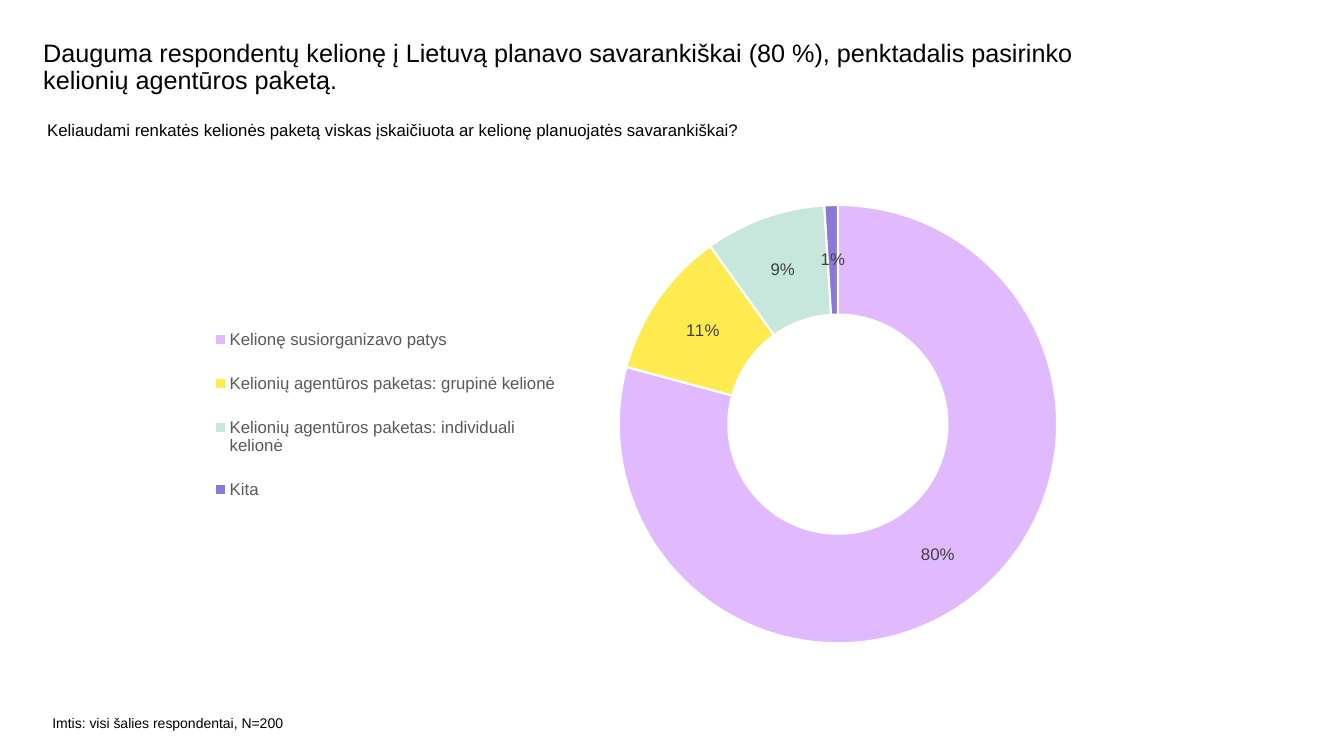
from dataclasses import dataclass

from lxml.etree import SubElement
from pptx import Presentation
from pptx.chart.data import CategoryChartData
from pptx.dml.color import RGBColor
from pptx.enum.chart import XL_CHART_TYPE, XL_LEGEND_POSITION
from pptx.oxml.ns import qn
from pptx.slide import Slide
from pptx.util import Cm, Pt

FONT = "Arial"
COLORS = {
    "text": "000000",
    "legend": "595959",
    "label": "404040",
    "border": "FFFFFF",
    "self_organised": "E1B9FF",
    "group_package": "FFEB50",
    "individual_package": "C7E6DC",
    "other": "8C78D7",
}


@dataclass(frozen=True)
class Caption:
    text: str
    left: float
    top: float
    width: float
    height: float
    size: int
    line_spacing: float = 1.0


@dataclass(frozen=True)
class Answer:
    label: str
    share: float
    color: str


CAPTIONS = [
    Caption("Dauguma respondentų kelionę į Lietuvą planavo savarankiškai (80 %), "
            "penktadalis pasirinko kelionių agentūros paketą.",
            1.09, 1.02, 28.02, 1.52, size=18, line_spacing=0.9),
    Caption("Keliaudami renkatės kelionės paketą viskas įskaičiuota ar kelionę "
            "planuojatės savarankiškai?",
            1.19, 3.02, 30.2, 1.55, size=12),
    Caption("Imtis: visi šalies respondentai, N=200",
            1.32, 18.01, 6.43, 0.61, size=10),
]

ANSWERS = [
    Answer("Kelionę susiorganizavo patys", 0.8, "self_organised"),
    Answer("Kelionių agentūros paketas: grupinė kelionė", 0.11, "group_package"),
    Answer("Kelionių agentūros paketas: individuali kelionė", 0.09, "individual_package"),
    Answer("Kita", 0.01, "other"),
]


def rgb(color: str) -> RGBColor:
    return RGBColor.from_string(COLORS[color])


def style_font(font, size: int, color: str) -> None:
    font.name = FONT
    font.size = Pt(size)
    font.color.rgb = rgb(color)


def add_text(slide: Slide, text: str, *, left: float, top: float, width: float,
             height: float, size: int, line_spacing: float = 1.0,
             color: str = "text") -> None:
    box = slide.shapes.add_textbox(Cm(left), Cm(top), Cm(width), Cm(height))
    frame = box.text_frame
    frame.word_wrap = True
    frame.margin_left = frame.margin_right = 0
    frame.margin_top = frame.margin_bottom = 0
    paragraph = frame.paragraphs[0]
    paragraph.line_spacing = line_spacing
    run = paragraph.add_run()
    run.text = text
    style_font(run.font, size, color)


def set_layout(layout, x: float, y: float, w: float, h: float,
               inner: bool = False) -> None:
    """Place a chart part by fractions of the chart area."""
    manual = SubElement(layout, qn("c:manualLayout"))
    settings = [("layoutTarget", "inner")] if inner else []
    settings += [("xMode", "edge"), ("yMode", "edge"),
                 ("x", x), ("y", y), ("w", w), ("h", h)]
    for tag, value in settings:
        SubElement(manual, qn(f"c:{tag}")).set("val", str(value))


def add_planning_chart(slide: Slide, answers: list[Answer]) -> None:
    data = CategoryChartData(number_format="0%")
    data.categories = [answer.label for answer in answers]
    data.add_series("Series 1", [answer.share for answer in answers])
    chart = slide.shapes.add_chart(XL_CHART_TYPE.DOUGHNUT, Cm(4.55), Cm(4.55),
                                   Cm(23.5), Cm(12.04), data).chart
    chart.has_title = False
    style_font(chart.font, 10, "text")

    plot = chart.plots[0]
    plot.vary_by_categories = True
    for index, answer in enumerate(answers):
        slice_format = plot.series[0].points[index].format
        slice_format.fill.solid()
        slice_format.fill.fore_color.rgb = rgb(answer.color)
        slice_format.line.color.rgb = rgb("border")
        slice_format.line.width = Pt(1.5)

    labels = plot.series[0].data_labels
    labels.show_value = True
    labels.show_percentage = False
    labels.number_format = "0%"
    labels.number_format_is_linked = False
    style_font(labels.font, 12, "label")

    chart.has_legend = True
    legend = chart.legend
    legend.position = XL_LEGEND_POSITION.BOTTOM
    legend.include_in_layout = False
    style_font(legend.font, 12, "legend")

    plot_area = chart.element.chart.plotArea
    plot_layout = plot_area.find(qn("c:layout"))
    if plot_layout is None:
        plot_layout = SubElement(plot_area, qn("c:layout"))
        plot_area.insert(0, plot_layout)
    set_layout(plot_layout, 0.47, 0.02, 0.47, 0.98, inner=True)

    legend_element = chart.element.chart.find(qn("c:legend"))
    legend_layout = legend_element.find(qn("c:layout"))
    if legend_layout is None:
        legend_layout = SubElement(legend_element, qn("c:layout"))
        legend_element.find(qn("c:legendPos")).addnext(legend_layout)
    set_layout(legend_layout, 0.03, 0.26, 0.38, 0.46)


def main() -> None:
    presentation = Presentation()
    presentation.slide_width = Cm(33.87)
    presentation.slide_height = Cm(19.05)
    slide = presentation.slides.add_slide(presentation.slide_layouts[6])
    for caption in CAPTIONS:
        add_text(slide, caption.text, left=caption.left, top=caption.top,
                 width=caption.width, height=caption.height, size=caption.size,
                 line_spacing=caption.line_spacing)
    add_planning_chart(slide, ANSWERS)
    presentation.save("out.pptx")


if __name__ == "__main__":
    main()
